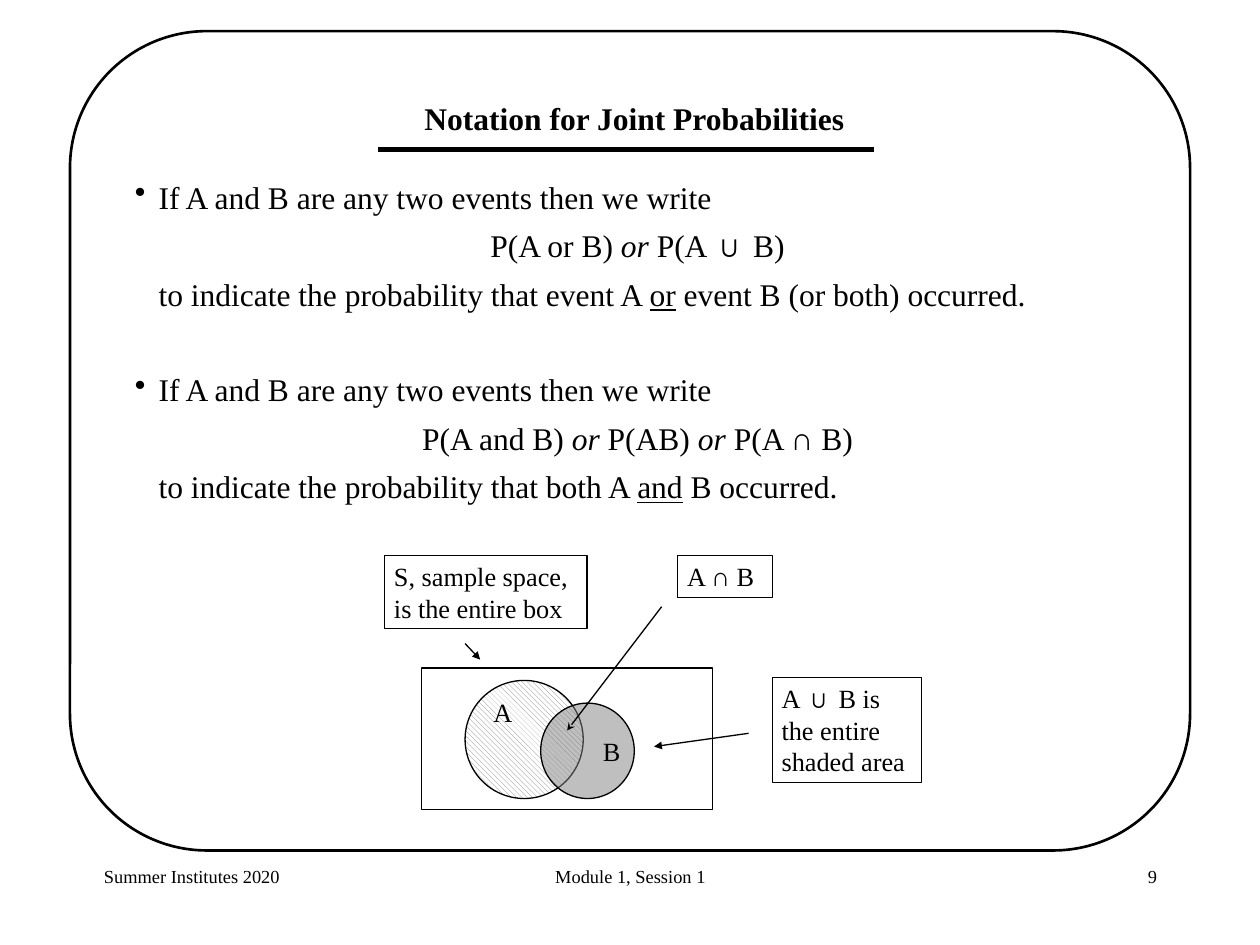
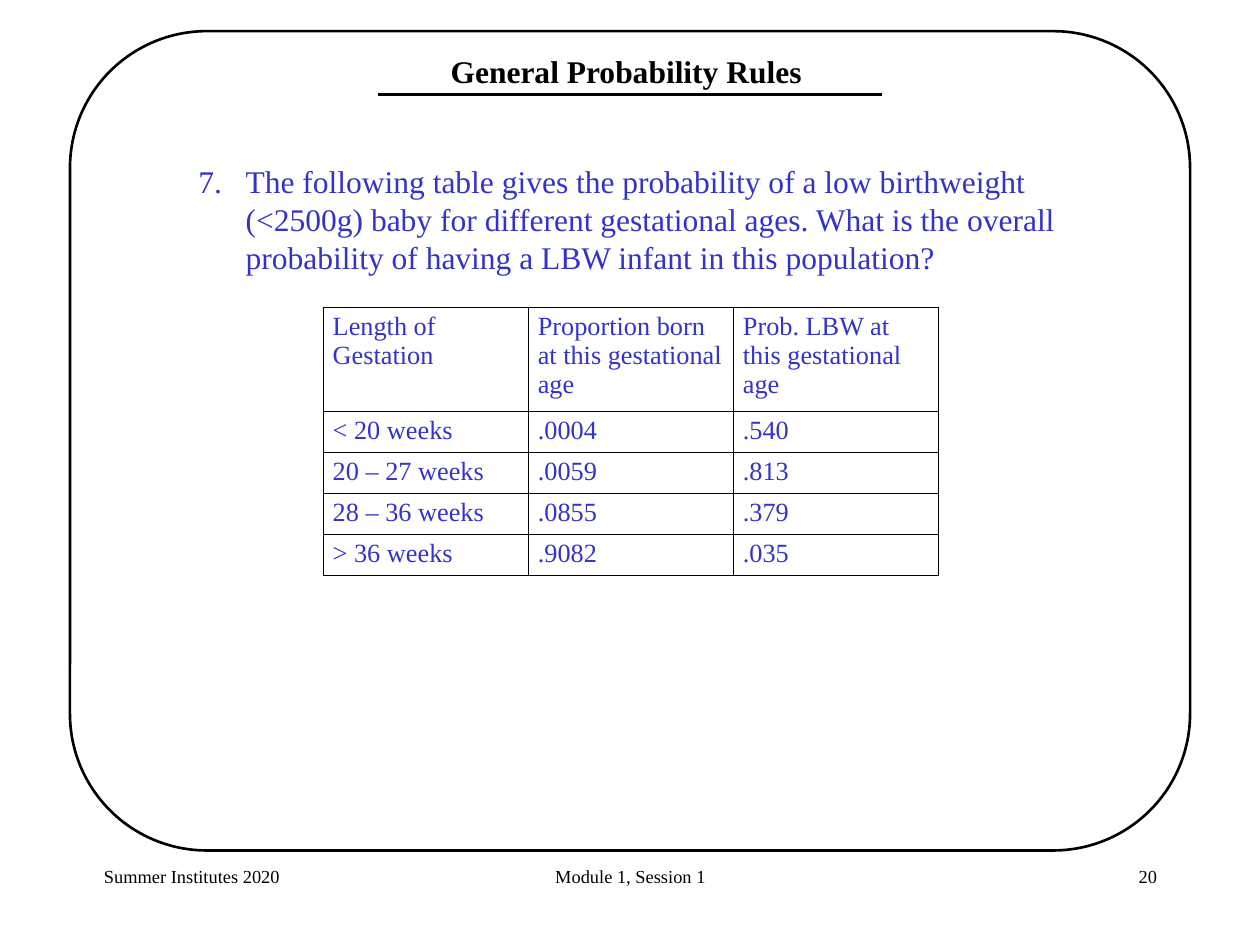
import pptx
import pptx.dml.color
import pptx.enum.dml
import pptx.enum.shapes
import pptx.enum.text
import pptx.oxml.ns
import pptx.util
from lxml import etree

PX = 9144  # EMU per px, 100 px to the inch
FONT = "Times New Roman"
BLACK = pptx.dml.color.RGBColor(0x00, 0x00, 0x00)
WHITE = pptx.dml.color.RGBColor(0xFF, 0xFF, 0xFF)
GRAY = pptx.dml.color.RGBColor(0x80, 0x80, 0x80)
BLUE = pptx.dml.color.RGBColor(0x33, 0x33, 0xCC)

SHAPE = pptx.enum.shapes.MSO_SHAPE
ALIGN = pptx.enum.text.PP_ALIGN
qn = pptx.oxml.ns.qn


def put_text(tf, text, size=20, color=BLACK, bold=False, align=ALIGN.LEFT,
             before=0, margin=0, bullet=None, start=None):
    """Add one paragraph; text is a string or a list of (string, "i"/"u"/"")."""
    p = tf.paragraphs[0] if not tf.paragraphs[0].runs else tf.add_paragraph()
    p.alignment = align
    p.space_before = pptx.util.Pt(before)
    pPr = p._p.get_or_add_pPr()
    pPr.set("marL", str(margin * PX))
    hanging = bullet or start
    pPr.set("indent", str(-margin * PX if hanging else 0))
    if bullet:
        etree.SubElement(pPr, qn("a:buChar"), char=bullet)
    elif start:
        etree.SubElement(pPr, qn("a:buAutoNum"), type="arabicPeriod", startAt=str(start))
    else:
        etree.SubElement(pPr, qn("a:buNone"))
    for words, style in [(text, "")] if isinstance(text, str) else text:
        for n, line in enumerate(words.split("\n")):
            if n:
                p.add_line_break()
            r = p.add_run()
            r.text = line
            r.font.name = FONT
            r.font.size = pptx.util.Pt(size)
            r.font.color.rgb = color
            r.font.bold = bold
            r.font.italic = style == "i"
            r.font.underline = style == "u"


class Deck:
    def __init__(self):
        self.prs = pptx.Presentation()
        self.prs.slide_width = 1333 * PX
        self.prs.slide_height = 1000 * PX

    def slide(self, number):
        """Start a slide with the rounded frame and the footers."""
        self.s = self.prs.slides.add_slide(self.prs.slide_layouts[6])
        frame = self.shape(SHAPE.ROUNDED_RECTANGLE, 74, 33, 1185, 867, weight=2)
        frame.adjustments[0] = 0.167
        self.text(100, 911, 278, 67, "Summer Institutes 2020", size=14)
        self.text(456, 911, 422, 67, "Module 1, Session 1", size=14, align=ALIGN.CENTER)
        self.text(956, 911, 278, 67, str(number), size=14, align=ALIGN.RIGHT)

    def title(self, x, y, w, text, rule, weight):
        """Centred title over a heavy rule given as (left, right, y)."""
        self.text(x, y, w, 50, text, size=24, bold=True, align=ALIGN.CENTER)
        left, right, level = rule
        self.line(left, level, right, level, weight)

    def shape(self, kind, x, y, w, h, weight=1, text=None):
        sp = self.s.shapes.add_shape(kind, x * PX, y * PX, w * PX, h * PX)
        sp.shadow.inherit = False
        sp.fill.background()
        sp.line.color.rgb = BLACK
        sp.line.width = pptx.util.Pt(weight)
        if text:
            tf = sp.text_frame
            tf.word_wrap = True
            tf.vertical_anchor = pptx.enum.text.MSO_ANCHOR.TOP
            put_text(tf, text)
        return sp

    def text(self, x, y, w, h, text=None, **style):
        sp = self.s.shapes.add_textbox(x * PX, y * PX, w * PX, h * PX)
        tf = sp.text_frame
        tf.word_wrap = True
        if text:
            put_text(tf, text, **style)
        return tf

    def line(self, x1, y1, x2, y2, weight=1, head=None):
        sp = self.s.shapes.add_connector(
            pptx.enum.shapes.MSO_CONNECTOR.STRAIGHT, x1 * PX, y1 * PX, x2 * PX, y2 * PX)
        sp.line.color.rgb = BLACK
        sp.line.width = pptx.util.Pt(weight)
        if head:
            etree.SubElement(sp.line._get_or_add_ln(), qn("a:tailEnd"), type=head)
        etree.SubElement(sp._element.spPr, qn("a:effectLst"))

    def table(self, x, y, col_w, heights, rows, color):
        cols = len(rows[0])
        table = self.s.shapes.add_table(
            len(rows), cols, x * PX, y * PX, cols * col_w * PX, sum(heights) * PX).table
        table.first_row = table.horz_banding = False
        for col in table.columns:
            col.width = col_w * PX
        for row, height, texts in zip(table.rows, heights, rows):
            row.height = height * PX
            for cell, text in zip(row.cells, texts):
                put_text(cell.text_frame, text, color=color)
                self.borders(cell)
                cell.fill.background()

    def borders(self, cell):
        tcPr = cell._tc.get_or_add_tcPr()
        for side in ("a:lnL", "a:lnR", "a:lnT", "a:lnB"):
            ln = etree.SubElement(tcPr, qn(side), w=str(pptx.util.Pt(1)))
            fill = etree.SubElement(ln, qn("a:solidFill"))
            etree.SubElement(fill, qn("a:srgbClr"), val=str(BLACK))


def joint_probabilities(deck):
    deck.slide(9)
    deck.title(425, 100, 492, "Notation for Joint Probabilities", (400, 925, 158), 4)

    # Definitions of union and intersection
    intro = "If A and B are any two events then we write"
    definitions = [
        ([("P(A or B) ", ""), ("or ", "i"), ("P(A ∪ B)", "")],
         [("to indicate the probability that event A ", ""), ("or", "u"),
          (" event B (or both) occurred.", "")]),
        ([("P(A and B) ", ""), ("or ", "i"), ("P(AB) ", ""), ("or ", "i"), ("P(A ∩ B)", "")],
         [("to indicate the probability that both A ", ""), ("and", "u"),
          (" B occurred.", "")]),
    ]
    tf = deck.text(133, 183, 1083, 628)
    for gap, (formula, meaning) in zip((0, 44), definitions):
        put_text(tf, intro, size=24, before=gap, margin=25, bullet="•")
        put_text(tf, formula, size=24, before=8.2, align=ALIGN.CENTER)
        put_text(tf, meaning, size=24, before=8.2, margin=25)

    # Venn diagram
    deck.shape(SHAPE.RECTANGLE, 446, 707, 308, 150)
    event_a = deck.shape(SHAPE.OVAL, 492, 720, 125, 125)
    event_a.fill.patterned()
    event_a.fill.pattern = pptx.enum.dml.MSO_PATTERN.WIDE_DOWNWARD_DIAGONAL
    event_a.fill.fore_color.rgb = GRAY
    event_a.fill.back_color.rgb = WHITE
    event_b = deck.shape(SHAPE.OVAL, 572, 744, 99, 101)
    event_b.fill.solid()
    event_b.fill.fore_color.rgb = GRAY
    gray = event_b._element.spPr.find(qn("a:solidFill"))[0]
    etree.SubElement(gray, qn("a:alpha"), val="50000")
    deck.text(628, 773, 42, 44, "B")
    deck.text(512, 732, 42, 44, "A")

    # Callouts and their arrows
    deck.shape(SHAPE.RECTANGLE, 717, 588, 100, 44, text="A ∩ B")
    deck.line(700, 642, 600, 773, head="stealth")
    deck.shape(SHAPE.RECTANGLE, 817, 717, 158, 111, text="A ∪ B is the entire shaded area")
    deck.line(792, 776, 692, 790, head="triangle")
    deck.shape(SHAPE.RECTANGLE, 407, 588, 214, 77, text="S, sample space,\nis the entire box")
    deck.line(492, 681, 508, 698, head="triangle")


def probability_rules(deck):
    deck.slide(20)
    deck.title(450, 50, 425, "General Probability Rules", (400, 933, 100), 3)

    # Question
    deck.text(200, 167, 1008, 454,
              "The following table gives the probability of a low birthweight (<2500g) baby "
              "for different gestational ages. What is the overall probability of having a "
              "LBW infant in this population?",
              size=24, color=BLUE, margin=50, start=7)

    # Gestation table
    rows = [
        ("Length of Gestation", "Proportion born at this gestational age",
         "Prob. LBW at this gestational age"),
        ("< 20 weeks", ".0004", ".540"),
        ("20 – 27 weeks", ".0059", ".813"),
        ("28 – 36 weeks", ".0855", ".379"),
        ("> 36 weeks", ".9082", ".035"),
    ]
    deck.table(342, 325, 217, [110] + [43] * 4, rows, BLUE)


def main():
    deck = Deck()
    joint_probabilities(deck)
    probability_rules(deck)
    deck.prs.save("out.pptx")


if __name__ == "__main__":
    main()
